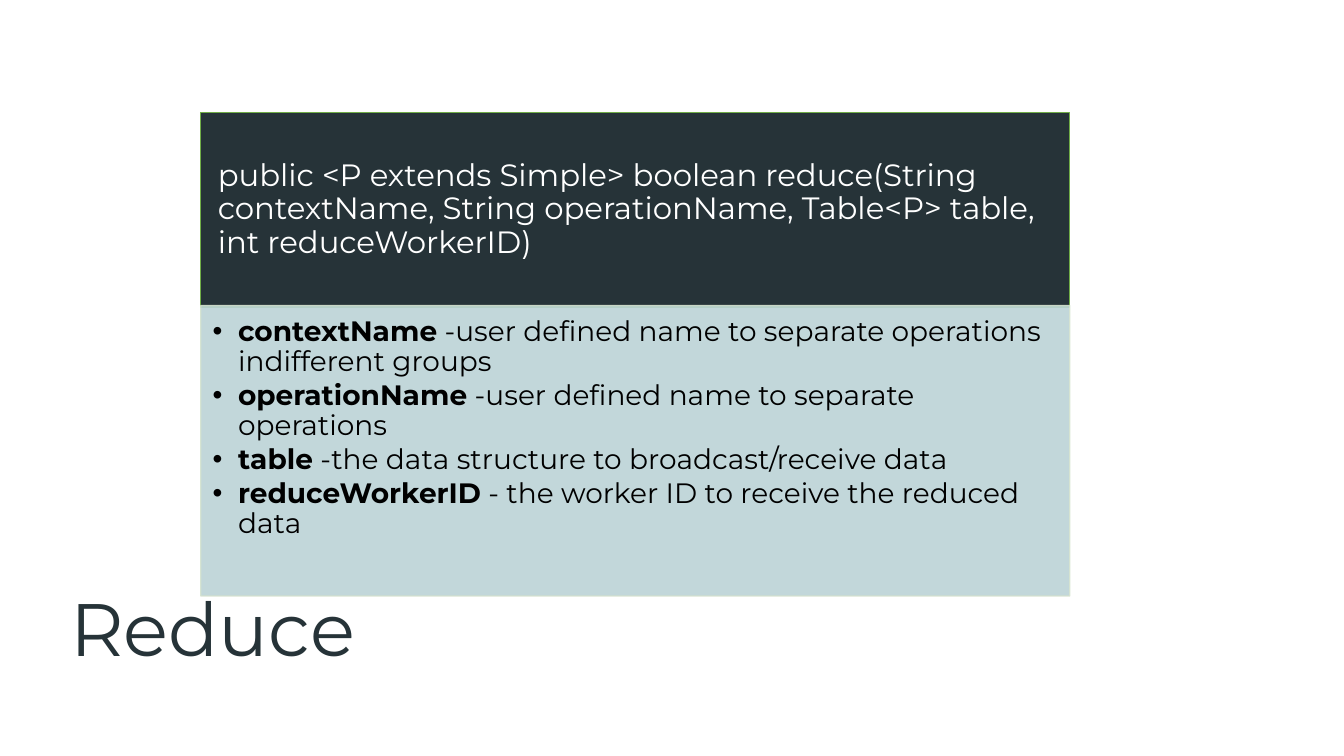
from lxml import etree
from pptx import Presentation
from pptx import util as u
from pptx.dml import color
from pptx.enum import shapes, text
from pptx.oxml import ns

HUES = {"dark": "263338", "green": "70AD47", "pale": "BCD3D6",
        "edge": "D5E3CF", "white": "FFFFFF", "black": "000000"}
FONT = "Montserrat"
SIGN = ("public <P extends Simple> boolean reduce(String contextName, "
        "String operationName, Table<P> table, int reduceWorkerID)")
ARGS = [
    ("contextName", " -user defined name to separate operations indifferent groups"),
    ("operationName", " -user defined name to separate operations"),
    ("table", " -the data structure to broadcast/receive data"),
    ("reduceWorkerID", " - the worker ID to receive the reduced data"),
]


def hue(name):
    return color.RGBColor.from_string(HUES[name])


def style(run, size, tint, bold=False):
    run.font.name = FONT
    run.font.size = u.Pt(size)
    run.font.bold = bold
    run.font.color.rgb = hue(tint)


def frame(shape, pads, anchor):
    body = shape.text_frame
    body.word_wrap = True
    body.vertical_anchor = anchor
    (body.margin_left, body.margin_top,
     body.margin_right, body.margin_bottom) = map(u.Cm, pads)
    return body


def line(para):
    para.alignment = text.PP_ALIGN.LEFT
    para.line_spacing = 0.9


def panel(slide, box, fill, edge):
    rect = slide.shapes.add_shape(shapes.MSO_SHAPE.RECTANGLE, *map(u.Cm, box))
    rect.shadow.inherit = False
    rect.fill.solid()
    rect.fill.fore_color.rgb = hue(fill)
    rect.line.color.rgb = hue(edge)
    rect.line.width = u.Pt(1)
    return rect


def fade(shape, share):
    # Applies to both fill and outline
    for tint in shape._element.spPr.iter(ns.qn("a:srgbClr")):
        etree.SubElement(tint, ns.qn("a:alpha"), val=str(share * 1000))


def bullet(para, inset):
    props = para._p.get_or_add_pPr()
    props.set("marL", str(u.Cm(inset)))
    props.set("indent", str(-u.Cm(inset)))
    etree.SubElement(props, ns.qn("a:buFont"), typeface="Arial")
    etree.SubElement(props, ns.qn("a:buChar"), char="•")


def header(slide, box):
    rect = panel(slide, box, "dark", "green")
    body = frame(rect, (0.43, 0.25, 0.43, 0.25), text.MSO_ANCHOR.MIDDLE)
    body.text = SIGN
    line(body.paragraphs[0])
    style(body.paragraphs[0].runs[0], 22, "white")


def details(slide, box):
    rect = panel(slide, box, "pale", "edge")
    fade(rect, 90)
    body = frame(rect, (0.3, 0.3, 0.4, 0.43), text.MSO_ANCHOR.TOP)
    body.text = "\n".join(name for name, _ in ARGS)
    for para, (_, note) in zip(body.paragraphs, ARGS):
        line(para)
        para.space_after = u.Pt(2.5)
        bullet(para, 0.64)
        style(para.runs[0], 20, "black", True)
        rest = para.add_run()
        rest.text = note
        style(rest, 20, "black")


def title(slide, box):
    area = slide.shapes.add_textbox(*map(u.Cm, box))
    body = frame(area, (0.25, 0.13, 0.25, 0.13), text.MSO_ANCHOR.TOP)
    body.text = "Reduce"
    line(body.paragraphs[0])
    style(body.paragraphs[0].runs[0], 53, "dark")


def method(slide, box):
    # Signature above its parameters, overlapping slightly
    left, top, width, height = box
    head, rest = 4.9, 7.32
    header(slide, (left, top, width, head))
    details(slide, (left, top + height - rest, width, rest))


def main():
    deck = Presentation()
    deck.slide_width, deck.slide_height = u.Cm(33.87), u.Cm(19.05)
    slide = deck.slides.add_slide(deck.slide_layouts[6])
    method(slide, (5.06, 2.84, 21.9, 12.18))
    title(slide, (1.52, 14.81, 29.21, 3.68))
    deck.save("out.pptx")


if __name__ == "__main__":
    main()
